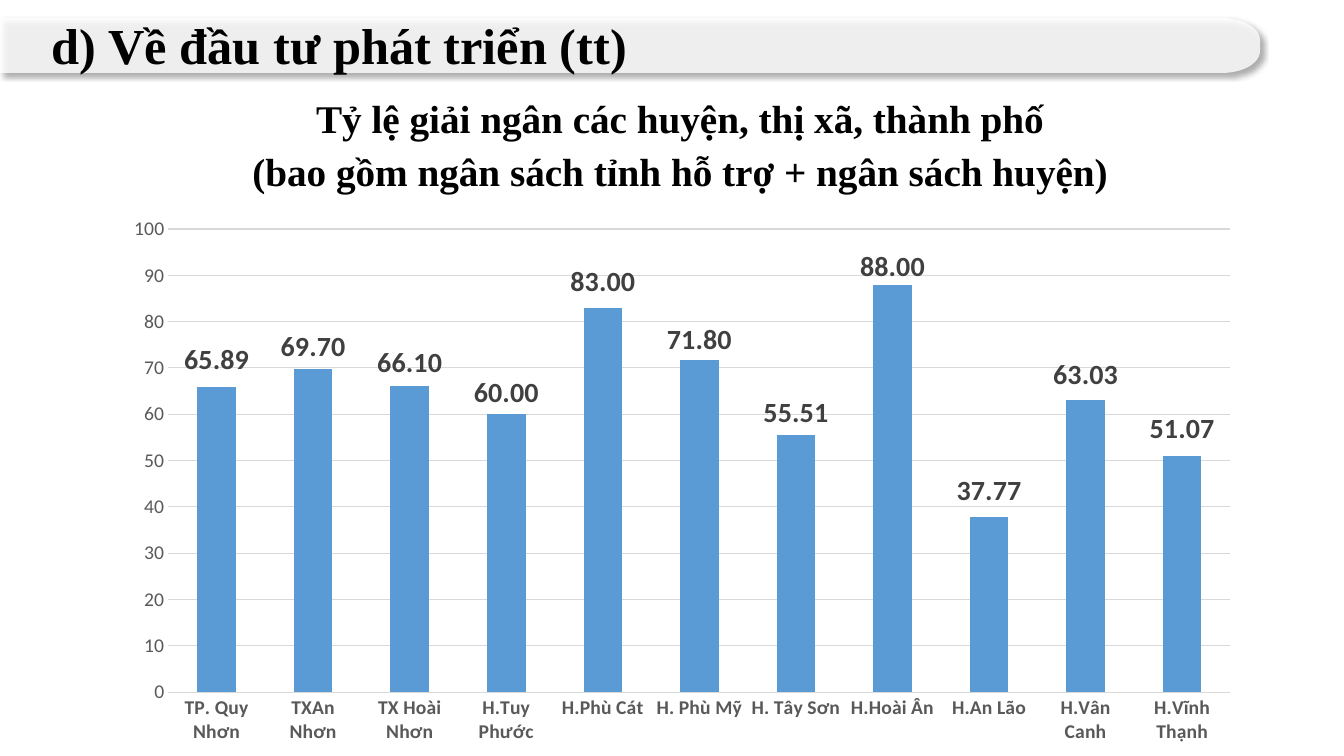
import math
from lxml import etree
from pptx import Presentation
from pptx import util as u
from pptx.chart.data import CategoryChartData
from pptx.dml.color import RGBColor
from pptx.enum import chart as ch, text as t
from pptx.oxml import parse_xml
from pptx.oxml.ns import nsdecls, qn

HEADING = ["d) Về đầu tư phát triển (tt)"]
CHART_TITLE = [
    "Tỷ lệ giải ngân các huyện, thị xã, thành phố",
    "(bao gồm ngân sách tỉnh hỗ trợ + ngân sách huyện)",
]
DISTRICTS = [
    ("TP. Quy Nhơn", 65.89, 28),
    ("TXAn Nhơn", 69.7, 23),
    ("TX Hoài Nhơn", 66.1, 24),
    ("H.Tuy Phước", 60, 22),
    ("H.Phù Cát", 83, 26),
    ("H. Phù Mỹ", 71.8, 20),
    ("H. Tây Sơn", 55.51, 23),
    ("H.Hoài Ân", 88, 18),
    ("H.An Lão", 37.77, 27),
    ("H.Vân Canh", 63.03, 26),
    ("H.Vĩnh Thạnh", 51.07, 27),
]
COLORS = {"ink": "000000", "band": "FFFFFF", "bar": "5B9BD5",
          "axis": "595959", "grid": "D9D9D9", "label": "404040"}
SCALE = 9071
CHART_BOX = (97, 217, 1134, 527)
PLOT_BOX = (168, 227, 1062, 467)
BAND = {"right": 1260, "top": 18, "bottom": 73, "rx": 38, "ry": 22}


def px(n):
    return u.Emu(round(n * SCALE))


def color(name):
    return RGBColor.from_string(COLORS[name])


def style(font, size, ink, bold=False, face="Calibri"):
    font.size, font.bold, font.name = u.Pt(size), bold, face
    font.color.rgb = color(ink)


def add_text(slide, lines, box, size, align, before):
    frame = slide.shapes.add_textbox(*map(px, box)).text_frame
    frame.word_wrap = True
    for i, line in enumerate(lines):
        para = frame.paragraphs[0] if i == 0 else frame.add_paragraph()
        para.alignment, para.space_before = align, u.Pt(before)
        run = para.add_run()
        run.text = line
        style(run.font, size, "ink", True, "Times New Roman")


def add_band(slide):
    right, top, bottom, rx, ry = BAND.values()
    corners = [(top + ry, -90), (bottom - ry, 0)]
    edge = [(right - rx + rx * math.cos(math.radians(start + step)),
             cy + ry * math.sin(math.radians(start + step)))
            for cy, start in corners for step in range(0, 91, 6)]
    outline = slide.shapes.build_freeform(0, px(top), scale=1.0)
    outline.add_line_segments([(px(x), px(y)) for x, y in edge] + [(0, px(bottom))])
    band = outline.convert_to_shape()
    band.fill.solid()
    band.fill.fore_color.rgb = color("band")
    band.line.fill.background()
    tint = band.fill._xPr.find(qn("a:solidFill"))[0]
    etree.SubElement(tint, qn("a:alpha"), val="80000")
    band._element.spPr.append(parse_xml(
        f'<a:effectLst {nsdecls("a")}><a:outerShdw blurRad="50800" dist="38100" '
        f'dir="2700000" algn="tl" rotWithShape="0"><a:srgbClr val="{COLORS["ink"]}">'
        '<a:alpha val="40000"/></a:srgbClr></a:outerShdw></a:effectLst>'))


def manual_layout(**settings):
    items = "".join(f'<c:{key} val="{value}"/>' for key, value in settings.items())
    return parse_xml(f'<c:layout {nsdecls("c")}><c:manualLayout>{items}'
                     '</c:manualLayout></c:layout>')


def hide_leader_lines(labels):
    node = labels._element
    for flag in node.findall(qn("c:showLeaderLines")):
        flag.set("val", "0")
    node.append(parse_xml(
        f'<c:extLst {nsdecls("c")}><c:ext uri="{{CE6537A1-D6FC-4f65-9D91-7224C49458BB}}" '
        'xmlns:c15="http://schemas.microsoft.com/office/drawing/2012/chart">'
        '<c15:showLeaderLines val="0"/></c:ext></c:extLst>'))


def style_axis(axis, bold):
    style(axis.tick_labels.font, 14, "axis", bold)
    axis.major_tick_mark = axis.minor_tick_mark = ch.XL_TICK_MARK.NONE


def add_rates(slide):
    data = CategoryChartData(number_format="#,##0.00")
    data.categories = [name for name, _, _ in DISTRICTS]
    data.add_series("Series 1", [rate for _, rate, _ in DISTRICTS])
    chart = slide.shapes.add_chart(ch.XL_CHART_TYPE.COLUMN_STACKED,
                                   *map(px, CHART_BOX), data).chart
    style(chart.font, 10, "ink")
    chart.has_legend = chart.has_title = False

    left, top, width, height = CHART_BOX
    x, y, w, h = PLOT_BOX
    area = chart._chartSpace.chart.plotArea
    for old in area.findall(qn("c:layout")):
        area.remove(old)
    area.insert(0, manual_layout(
        layoutTarget="inner", xMode="edge", yMode="edge",
        x=round((x - left) / width, 3), y=round((y - top) / height, 3),
        w=round(w / width, 3), h=round(h / height, 3)))

    names, rates = chart.category_axis, chart.value_axis
    style_axis(names, True)
    names.format.line.color.rgb = color("grid")
    names.format.line.width = u.Pt(0.75)
    style_axis(rates, False)
    rates.minimum_scale, rates.maximum_scale, rates.major_unit = 0, 100, 10
    rates.tick_labels.number_format = "General"
    rates.tick_labels.number_format_is_linked = False
    rates.format.line.fill.background()
    rates.major_gridlines.format.line.color.rgb = color("grid")
    rates.major_gridlines.format.line.width = u.Pt(0.75)

    plot = chart.plots[0]
    plot.gap_width, plot.overlap, plot.vary_by_categories = 150, 100, False
    bars = plot.series[0]
    bars.format.fill.solid()
    bars.format.fill.fore_color.rgb = color("bar")
    labels = bars.data_labels
    labels.show_value = True
    labels.number_format, labels.number_format_is_linked = "#,##0.00", False
    labels.position = ch.XL_LABEL_POSITION.CENTER
    style(labels.font, 20, "label", True)
    for i, (_, rate, lift) in enumerate(DISTRICTS):
        label = bars.points[i].data_label
        style(label.font, 20, "label", True)
        label.position = ch.XL_LABEL_POSITION.CENTER
        node = labels._element.findall(qn("c:dLbl"))[i]
        rise = rate / 100 * h / 2 + lift
        node.insert(1, manual_layout(x=0, y=round(-rise / height, 4)))
        node.insert(2, parse_xml(f'<c:numFmt {nsdecls("c")} formatCode="#,##0.00" '
                                 'sourceLinked="0"/>'))
    hide_leader_lines(labels)


def main():
    deck = Presentation()
    deck.slide_width, deck.slide_height = px(1344), px(756)
    slide = deck.slides.add_slide(deck.slide_layouts[6])
    add_text(slide, CHART_TITLE, (45, 89, 1270, 111), 28, t.PP_ALIGN.CENTER, 4.3)
    add_band(slide)
    add_text(slide, HEADING, (42, 9, 1216, 72), 36, t.PP_ALIGN.JUSTIFY, 4.3)
    add_rates(slide)
    deck.save("out.pptx")


if __name__ == "__main__":
    main()
